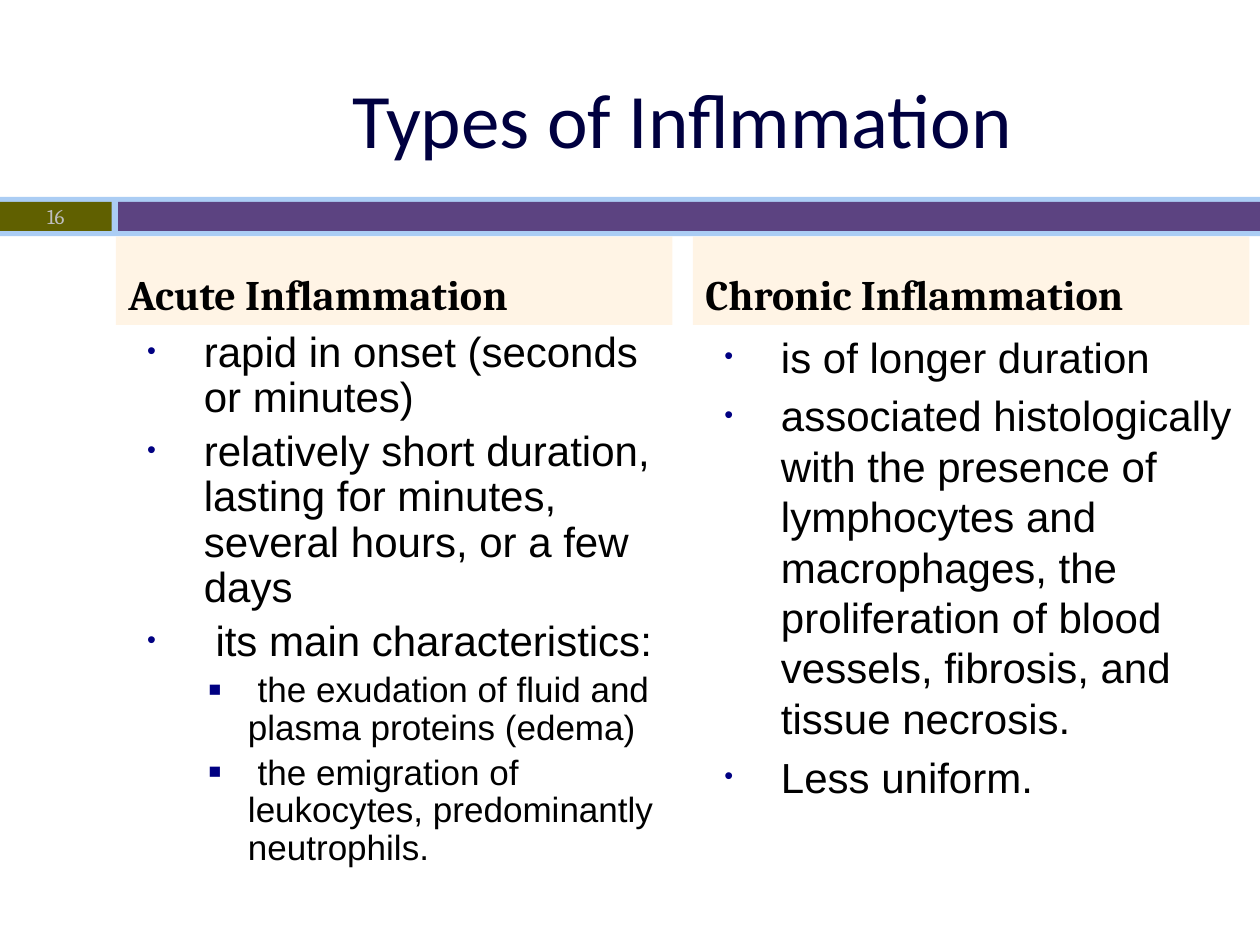
import pptx
import pptx.util
import pptx.dml.color
import pptx.enum.shapes
import pptx.enum.text
import pptx.oxml
from lxml import etree

Pt = pptx.util.Pt
Align = pptx.enum.text.PP_ALIGN
Anchor = pptx.enum.text.MSO_ANCHOR
NS = pptx.oxml.ns.qn


def color(code):
    return pptx.dml.color.RGBColor.from_string(code)


class Deck:
    ink = "000000"
    mark = "000082"
    # per level: text size, left margin, hanging indent, bullet
    levels = ((24, 43.2, -32.4, "•"), (20, 68.4, -22.5, "■"))

    def __init__(self, wide, high):
        self.file = pptx.Presentation()
        self.file.slide_width, self.file.slide_height = Pt(wide), Pt(high)
        self.slide = self.file.slides.add_slide(self.file.slide_layouts[6])

    def rect(self, left, top, wide, high, fill, alpha=None):
        kind = pptx.enum.shapes.MSO_SHAPE.RECTANGLE
        shape = self.slide.shapes.add_shape(
            kind, Pt(left), Pt(top), Pt(wide), Pt(high))
        shape.shadow.inherit = False
        shape.line.fill.background()
        shape.fill.solid()
        shape.fill.fore_color.rgb = color(fill)
        if alpha is not None:
            tone = shape.fill._xPr.find(".//" + NS("a:srgbClr"))
            etree.SubElement(tone, NS("a:alpha"), val=str(alpha * 1000))
        return shape

    def box(self, left, top, wide, high):
        return self.slide.shapes.add_textbox(
            Pt(left), Pt(top), Pt(wide), Pt(high))

    def run(self, para, text, size, font, tone, bold=False):
        run = para.add_run()
        run.text = text
        run.font.size, run.font.name, run.font.bold = Pt(size), font, bold
        run.font.color.rgb = color(tone)

    def label(self, shape, text, size, font, tone, align=Align.CENTER,
              anchor=Anchor.MIDDLE, bold=False):
        frame = shape.text_frame
        frame.word_wrap = True
        frame.vertical_anchor = anchor
        para = frame.paragraphs[0]
        para.alignment = align
        self.run(para, text, size, font, tone, bold)

    def bullet(self, para, level):
        _, left, hang, char = self.levels[level]
        props = para._p.get_or_add_pPr()
        props.set("marL", str(Pt(left)))
        props.set("indent", str(Pt(hang)))
        tint = etree.SubElement(props, NS("a:buClr"))
        etree.SubElement(tint, NS("a:srgbClr"), val=self.mark)
        etree.SubElement(props, NS("a:buSzPct"), val="60000")
        etree.SubElement(props, NS("a:buFont"), typeface="Arial")
        etree.SubElement(props, NS("a:buChar"), char=char)

    def points(self, shape, items, lead):
        """Fill shape with (level, text) items at line spacing lead."""
        frame = shape.text_frame
        frame.word_wrap = True
        for num, (level, text) in enumerate(items):
            para = frame.add_paragraph() if num else frame.paragraphs[0]
            size = self.levels[level][0]
            para.level = level
            para.line_spacing = lead
            para.space_before = Pt(size * 0.2)
            self.bullet(para, level)
            self.run(para, text, size, "Arial", self.ink)

    def column(self, left, head, items, lead):
        top, wide, high = 135.25, 318, 50.4
        band = self.rect(left, top, wide, high, "FF9900", 10)
        self.label(band, head, 24, "Cambria", self.ink,
                   Align.LEFT, Anchor.BOTTOM, True)
        self.points(self.box(left, top + high, wide, 330.5), items, lead)


ACUTE = (
    (0, "rapid in onset (seconds or minutes)"),
    (0, "relatively short duration, lasting for minutes, several hours, "
        "or a few days"),
    (0, " its main characteristics:"),
    (1, " the exudation of fluid and plasma proteins (edema)"),
    (1, " the emigration of leukocytes, predominantly neutrophils."),
)
CHRONIC = (
    (0, "is of longer duration"),
    (0, "associated histologically with the presence of lymphocytes and "
        "macrophages, the proliferation of blood vessels, fibrosis, "
        "and tissue necrosis."),
    (0, "Less uniform."),
)


def main():
    deck = Deck(720, 540)
    deck.rect(0, 112.5, 720, 22.5, "ABCDF4")
    deck.rect(0, 115.4, 63.9, 16.6, "606000")
    deck.rect(67.5, 115.4, 652.5, 16.6, "5C4381")
    deck.label(deck.box(66, 22.5, 648, 90), "Types of Inflmmation",
               44, "Calibri", "000040")
    deck.column(66.25, "Acute Inflammation", ACUTE, 0.9)
    deck.column(396, "Chronic Inflammation", CHRONIC, 1.0)
    deck.label(deck.box(0, 112.5, 63.9, 22.5), "16",
               12, "Cambria", "BDBDBD")
    deck.file.save("out.pptx")


if __name__ == "__main__":
    main()
